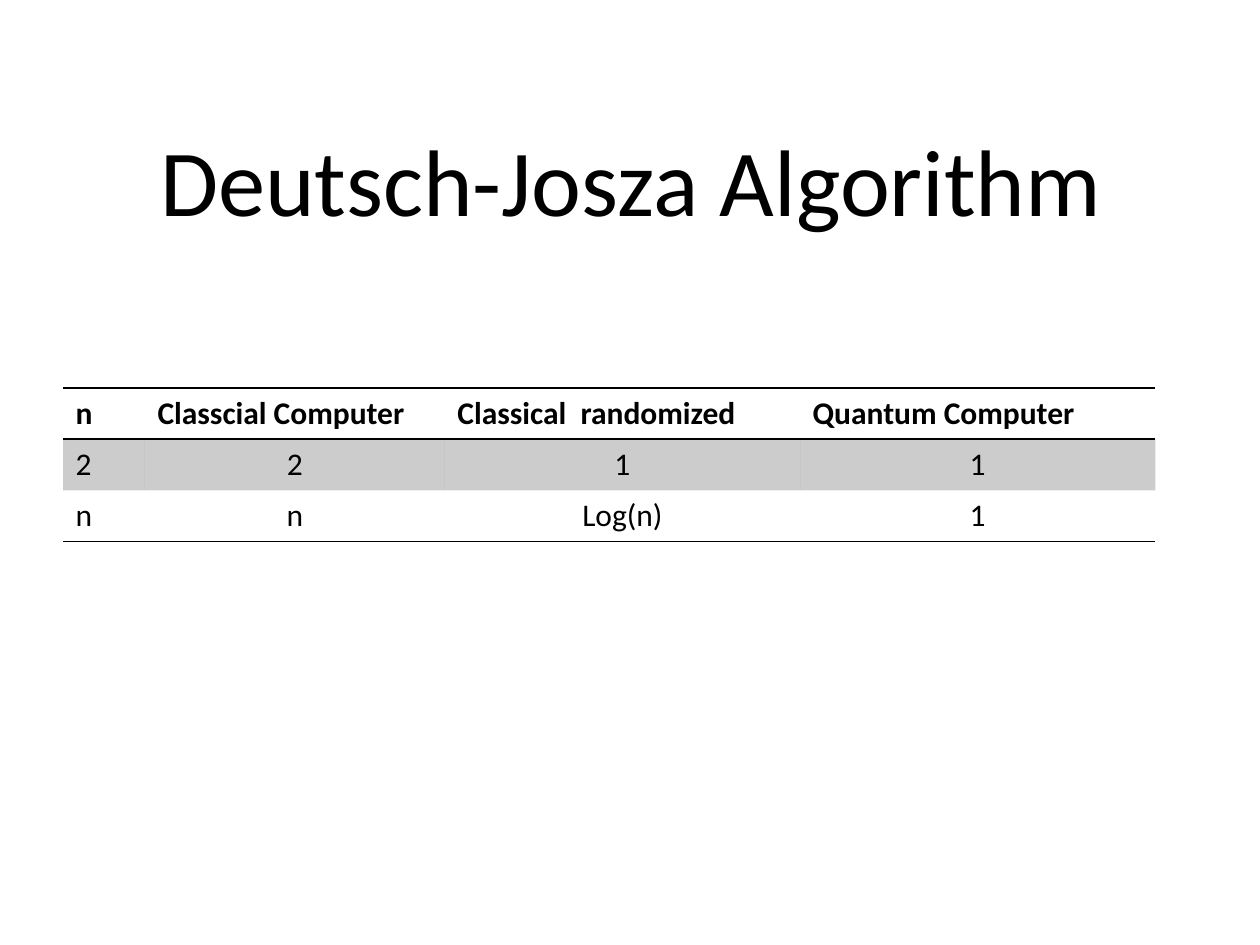
import pptx
import pptx.util
import pptx.dml.color
import pptx.enum.text
import pptx.oxml
import pptx.oxml.ns
import lxml.etree

COLORS = {"ink": "000000"}
NO_STYLE = "{2D5ABB26-0587-4C30-8999-92F81FD0307C}"
HEADER = ["n", "Classcial Computer", "Classical  randomized", "Quantum Computer"]
ROWS = [["2", "2", "1", "1"], ["n", "n", "Log(n)", "1"]]


class Deck:
    """Style and current slide; places are shares of the slide's size."""

    font = "Calibri"
    band_alpha = 20

    def __init__(self, width, height):
        self.prs = pptx.Presentation()
        self.prs.slide_width = pptx.util.Inches(width)
        self.prs.slide_height = pptx.util.Inches(height)
        self.s = self.prs.slides.add_slide(self.prs.slide_layouts[5])

    def x(self, share):
        return round(self.prs.slide_width * share)

    def y(self, share):
        return round(self.prs.slide_height * share)

    def run(self, p, text, size, bold=False):
        r = p.add_run()
        r.text = text
        r.font.name = self.font
        r.font.size = pptx.util.Pt(size)
        r.font.bold = bold
        r.font.color.rgb = pptx.dml.color.RGBColor.from_string(COLORS["ink"])

    def title(self, text, left, top, width, height, size):
        sp = self.s.shapes.title
        sp.left, sp.top = self.x(left), self.y(top)
        sp.width, sp.height = self.x(width), self.y(height)
        tf = sp.text_frame
        tf.word_wrap = True
        tf.auto_size = pptx.enum.text.MSO_AUTO_SIZE.NONE
        tf.vertical_anchor = pptx.enum.text.MSO_ANCHOR.TOP
        p = tf.paragraphs[0]
        p.alignment = pptx.enum.text.PP_ALIGN.LEFT
        self.run(p, text, size)

    def rule(self, cell, side):
        """Draw a 1 pt line on one side of a cell."""
        ln = pptx.oxml.parse_xml(
            f'<a:{side} {pptx.oxml.ns.nsdecls("a")} w="12700"><a:solidFill>'
            f'<a:srgbClr val="{COLORS["ink"]}"/></a:solidFill></a:{side}>')
        cell._tc.get_or_add_tcPr().append(ln)

    def band(self, cell):
        """Shade a cell with transparent ink."""
        cell.fill.solid()
        cell.fill.fore_color.rgb = pptx.dml.color.RGBColor.from_string(COLORS["ink"])
        clr = cell._tc.tcPr.find(".//" + pptx.oxml.ns.qn("a:solidFill") + "/"
                                 + pptx.oxml.ns.qn("a:srgbClr")) \
            if cell._tc.tcPr.find(pptx.oxml.ns.qn("a:lnT")) is None else \
            cell._tc.tcPr.findall(pptx.oxml.ns.qn("a:solidFill"))[0][0]
        lxml.etree.SubElement(clr, pptx.oxml.ns.qn("a:alpha"),
                              val=str(self.band_alpha * 1000))

    def table(self, rows, left, top, widths, row_height, size):
        tbl = self.s.shapes.add_table(
            len(rows), len(widths), self.x(left), self.y(top),
            self.x(sum(widths)), self.y(row_height * len(rows))).table
        tbl._tbl.tblPr.find(pptx.oxml.ns.qn("a:tableStyleId")).text = NO_STYLE
        for column, width in zip(tbl.columns, widths):
            column.width = self.x(width)
        for i, texts in enumerate(rows):
            tbl.rows[i].height = self.y(row_height)
            for j, text in enumerate(texts):
                cell = tbl.cell(i, j)
                p = cell.text_frame.paragraphs[0]
                if i and j:
                    p.alignment = pptx.enum.text.PP_ALIGN.CENTER
                self.run(p, text, size, bold=i == 0)
                if i == 0:
                    self.rule(cell, "lnT")
                if i in (0, len(rows) - 1):
                    self.rule(cell, "lnB")
                if i % 2:
                    self.band(cell)
                else:
                    cell.fill.background()


def main():
    deck = Deck(10, 7.5)
    deck.title("Deutsch-Josza Algorithm", 0.117, 0.92 / 7.5, 0.783, 1.01 / 7.5, size=54)
    deck.table([HEADER] + ROWS, 0.05, 3.08 / 7.5,
               [0.065, 0.238, 0.282, 0.282], 0.406 / 7.5, size=18)
    deck.prs.save("out.pptx")


if __name__ == "__main__":
    main()
